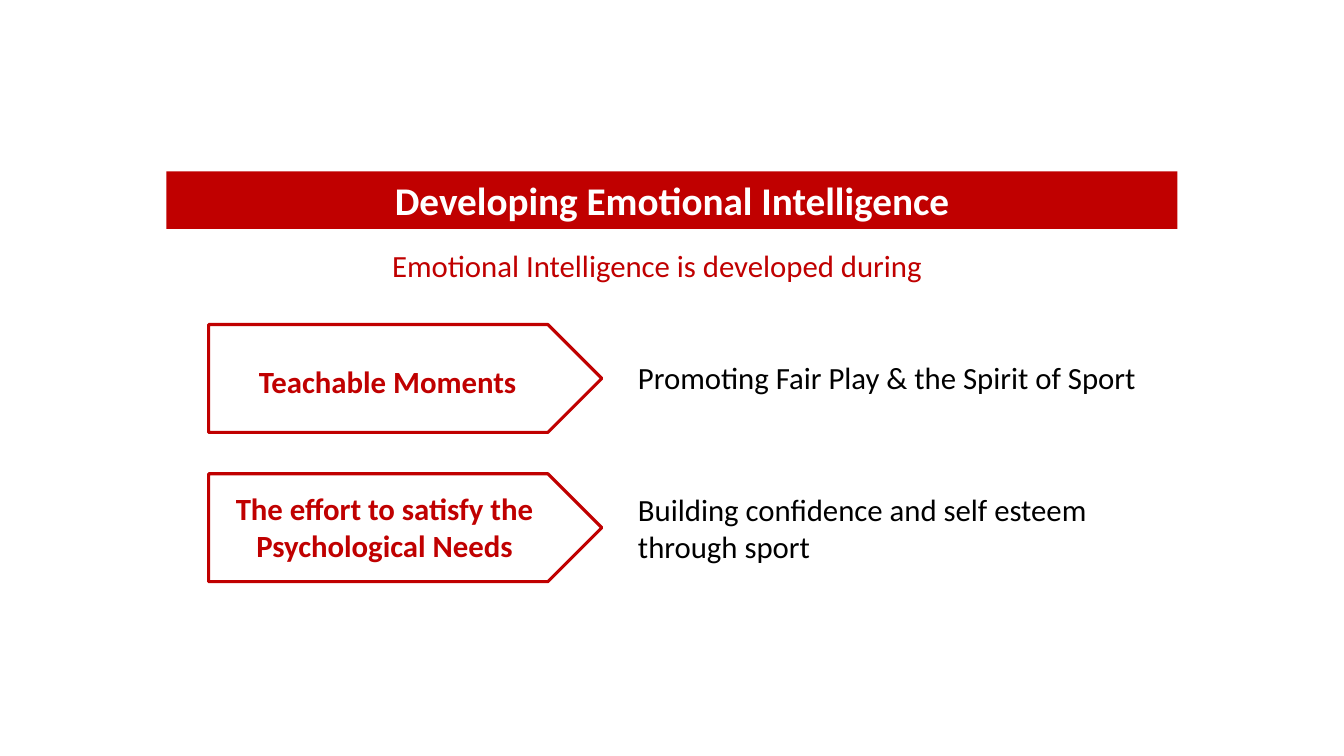
from typing import NamedTuple

from pptx import Presentation
from pptx import util as u
from pptx.dml.color import RGBColor
from pptx.enum import shapes, text

WIDTH, HEIGHT = u.Inches(13.33), u.Inches(7.5)
RED, WHITE, BLACK = "C00000", "FFFFFF", "000000"
CENTER, LEFT = text.PP_ALIGN.CENTER, text.PP_ALIGN.LEFT
ARROW_TOP, ARROW_STEP = 42.93, 19.74


class Area(NamedTuple):
    """Left, top, width and height in percent of the slide."""
    left: float
    top: float
    width: float
    height: float

    def lengths(self) -> tuple[int, int, int, int]:
        return (int(WIDTH * self.left / 100), int(HEIGHT * self.top / 100),
                int(WIDTH * self.width / 100), int(HEIGHT * self.height / 100))


class Setting(NamedTuple):
    occasion: str
    occasion_area: Area
    align: text.PP_ALIGN
    outcome: str
    outcome_area: Area


SETTINGS = [
    Setting("Teachable Moments", Area(18.53, 47.33, 28.2, 6.27), LEFT,
            "Promoting Fair Play & the Spirit of Sport", Area(46.73, 46.8, 40.88, 6.27)),
    Setting("The effort to satisfy the Psychological Needs", Area(14.55, 64.13, 28.13, 11.2), CENTER,
            "Building confidence and self esteem through sport", Area(46.73, 64.27, 40.88, 11.2)),
]


def color(value: str) -> RGBColor:
    return RGBColor.from_string(value)


def write(shape, words: str, *, size: int = 22, fill: str = BLACK,
          bold: bool = False, align: text.PP_ALIGN = LEFT) -> None:
    frame = shape.text_frame
    frame.word_wrap = True
    frame.auto_size = text.MSO_AUTO_SIZE.SHAPE_TO_FIT_TEXT
    frame.vertical_anchor = text.MSO_ANCHOR.TOP
    paragraph = frame.paragraphs[0]
    paragraph.alignment = align
    run = paragraph.add_run()
    run.text = words
    run.font.name = "Calibri"
    run.font.size = u.Pt(size)
    run.font.bold = bold
    run.font.color.rgb = color(fill)


def add_label(slide, area: Area, words: str, **style) -> None:
    write(slide.shapes.add_textbox(*area.lengths()), words, **style)


def add_banner(slide, words: str) -> None:
    banner = slide.shapes.add_shape(shapes.MSO_SHAPE.RECTANGLE, *Area(12.38, 22.67, 75.23, 7.6).lengths())
    banner.shadow.inherit = False
    banner.fill.solid()
    banner.fill.fore_color.rgb = color(RED)
    banner.line.fill.background()
    write(banner, words, size=28, fill=WHITE, bold=True, align=CENTER)


def add_arrow(slide, top: float) -> None:
    arrow = slide.shapes.add_shape(shapes.MSO_SHAPE.PENTAGON, *Area(15.53, top, 29.25, 14.27).lengths())
    arrow.shadow.inherit = False
    arrow.fill.background()
    arrow.line.color.rgb = color(RED)
    arrow.line.width = u.Pt(2.25)


def main() -> None:
    """Build the slide on developing emotional intelligence."""
    deck = Presentation()
    deck.slide_width, deck.slide_height = WIDTH, HEIGHT
    slide = deck.slides.add_slide(deck.slide_layouts[6])
    add_banner(slide, "Developing Emotional Intelligence")
    add_label(slide, Area(28.43, 32, 50.79, 6.27), "Emotional Intelligence is developed during", fill=RED)
    for row, setting in enumerate(SETTINGS):
        add_arrow(slide, ARROW_TOP + row * ARROW_STEP)
        add_label(slide, setting.occasion_area, setting.occasion, fill=RED, bold=True, align=setting.align)
        add_label(slide, setting.outcome_area, setting.outcome)
    deck.save("out.pptx")


if __name__ == "__main__":
    main()
